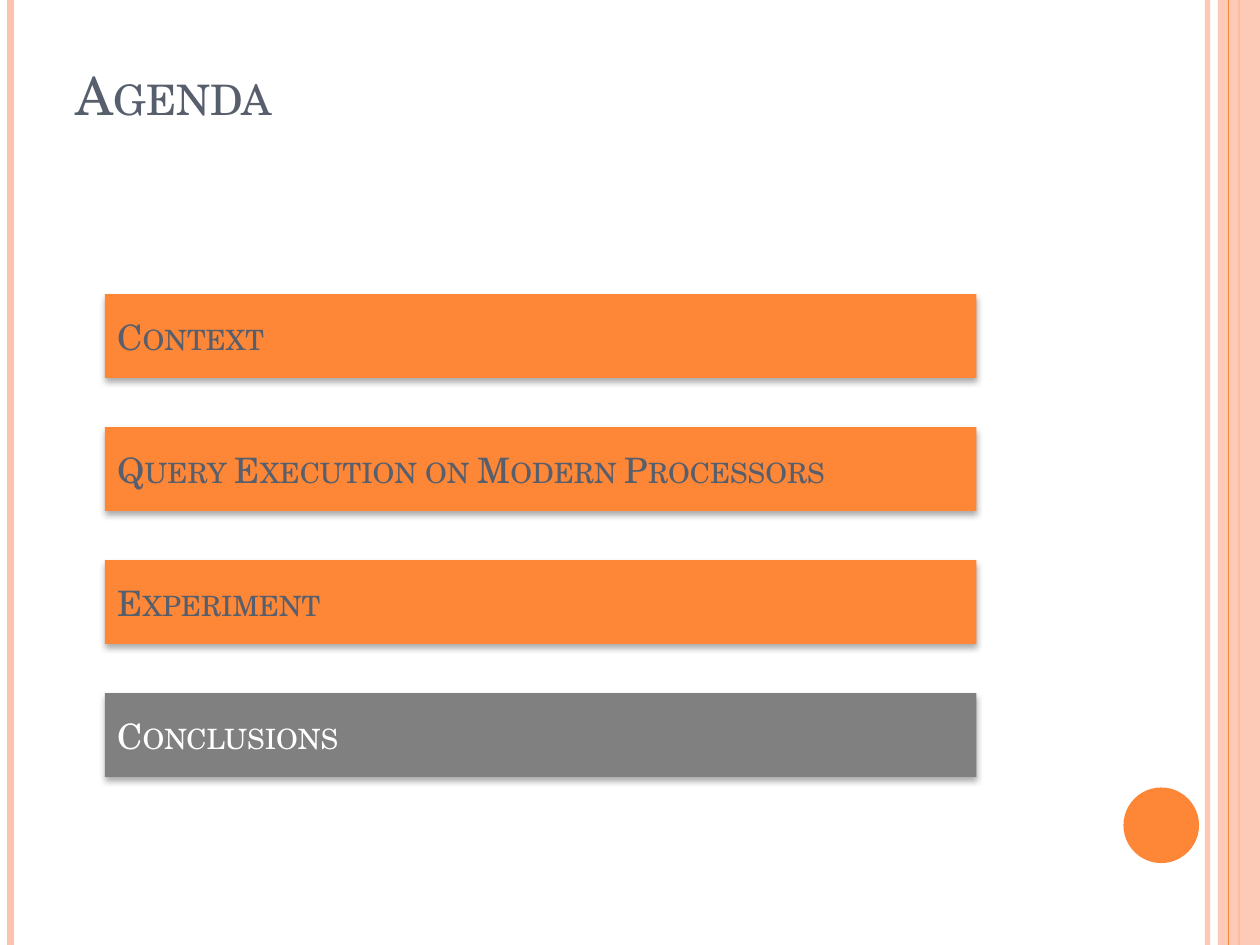
"""Build an agenda slide with four bars and a striped frame."""
from typing import NamedTuple

from pptx import Presentation
from pptx.dml.color import RGBColor
from pptx.enum.shapes import MSO_CONNECTOR, MSO_SHAPE
from pptx.enum.text import MSO_ANCHOR, PP_ALIGN
from pptx.oxml import parse_xml
from pptx.oxml.ns import nsdecls, qn
from pptx.util import Pt

ORANGE = RGBColor(0xFE, 0x86, 0x37)
PEACH = RGBColor(0xFE, 0xC3, 0xAE)
SLATE = RGBColor(0x57, 0x5F, 0x6D)
GRAY = RGBColor(0x80, 0x80, 0x80)
WHITE = RGBColor(0xFF, 0xFF, 0xFF)
FONT = "TeX Gyre Schola"
WIDE, HIGH = 720, 540
TOP, STEP = 168, 76


class Stripe(NamedTuple):
    x: float
    width: float
    color: RGBColor
    alpha: int = 100


class Bar(NamedTuple):
    text: str
    fill: RGBColor = ORANGE
    ink: RGBColor = SLATE


BACK = [Stripe(690, 3, PEACH, 93), Stripe(6, 4.5, PEACH), Stripe(708, 1.5, ORANGE)]
FRONT = Stripe(702, 0.75, ORANGE)
BARS = [
    Bar("Context"),
    Bar("Query Execution on Modern Processors"),
    Bar("Experiment"),
    Bar("Conclusions", GRAY, WHITE),
]


def set_alpha(item, alpha: int) -> None:
    """Make the colour of a shape or line partly clear."""
    if alpha < 100:
        color = next(item.element.iter(qn("a:srgbClr")))
        color.append(parse_xml(f'<a:alpha {nsdecls("a")} val="{alpha * 1000}"/>'))


def write(item, text: str, *, size: float, color: RGBColor,
          anchor: MSO_ANCHOR, base: float = 3.6) -> None:
    """Put small-caps text in a shape."""
    frame = item.text_frame
    frame.word_wrap = True
    frame.vertical_anchor = anchor
    frame.margin_bottom = Pt(base)
    line = frame.paragraphs[0]
    line.alignment = PP_ALIGN.LEFT
    run = line.add_run()
    run.text = text
    run.font.name = FONT
    run.font.size = Pt(size)
    run.font.color.rgb = color
    run._r.get_or_add_rPr().set("cap", "small")


def draw_stripe(slide, stripe: Stripe) -> None:
    """Draw a line down the full slide."""
    x = Pt(stripe.x)
    line = slide.shapes.add_connector(MSO_CONNECTOR.STRAIGHT, x, 0, x, Pt(HIGH))
    line.line.width = Pt(stripe.width)
    line.line.color.rgb = stripe.color
    line.element.spPr.append(parse_xml(f'<a:effectLst {nsdecls("a")}/>'))
    set_alpha(line, stripe.alpha)


def draw_shape(slide, kind: MSO_SHAPE, box: tuple, fill: RGBColor, alpha: int = 100):
    """Draw a flat shape with no outline."""
    shape = slide.shapes.add_shape(kind, *map(Pt, box))
    shape.shadow.inherit = False
    shape.fill.solid()
    shape.fill.fore_color.rgb = fill
    shape.line.fill.background()
    set_alpha(shape, alpha)
    return shape


def draw_bar(slide, bar: Bar, top: float) -> None:
    """Draw an agenda bar with a soft shadow."""
    shape = draw_shape(slide, MSO_SHAPE.RECTANGLE, (60, top, 498, 48), bar.fill)
    shape.element.spPr.find(qn("a:effectLst")).append(parse_xml(
        f'<a:outerShdw {nsdecls("a")} blurRad="{Pt(3.5)}" dist="{Pt(2.2)}" '
        'dir="5400000" rotWithShape="0"><a:srgbClr val="000000">'
        '<a:alpha val="32000"/></a:srgbClr></a:outerShdw>'))
    write(shape, bar.text, size=20, color=bar.ink, anchor=MSO_ANCHOR.MIDDLE)


def main() -> None:
    """Build and save the slide."""
    deck = Presentation()
    deck.slide_width, deck.slide_height = Pt(WIDE), Pt(HIGH)
    slide = deck.slides.add_slide(deck.slide_layouts[5])
    for stripe in BACK:
        draw_stripe(slide, stripe)
    draw_shape(slide, MSO_SHAPE.RECTANGLE, (696, 0, 24, HIGH), PEACH, 87)
    draw_stripe(slide, FRONT)
    draw_shape(slide, MSO_SHAPE.OVAL, (642, 450, 43.2, 43.2), ORANGE)

    title = slide.shapes.title
    title.left, title.top, title.width, title.height = map(Pt, (36, 21.6, 588, 90))
    write(title, "Agenda", size=30, color=SLATE, anchor=MSO_ANCHOR.BOTTOM, base=39.6)

    for row, bar in enumerate(BARS):
        draw_bar(slide, bar, TOP + row * STEP)
    deck.save("out.pptx")


if __name__ == "__main__":
    main()
